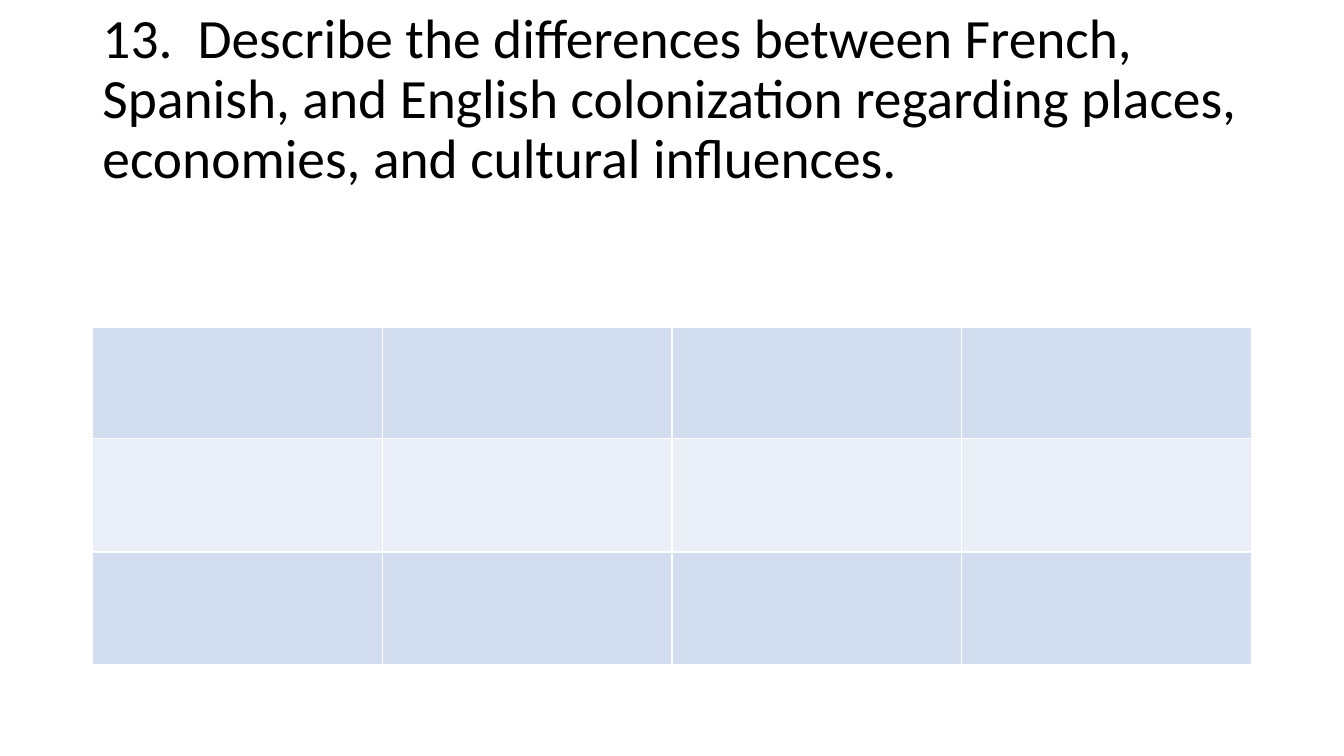
from lxml import etree
from pptx import Presentation
from pptx.dml.color import RGBColor
from pptx.enum import text
from pptx.oxml import ns
from pptx.util import Pt

LEFT, WIDTH = 66, 828
QUESTION = ("13.  Describe the differences between French, Spanish, and English "
            "colonization regarding places, economies, and cultural influences.")
ROW_FILLS = ["FFFFFF", "D2DEEF", "EAEFF7", "D2DEEF"]
COLUMNS = 4
ROW_HEIGHT = 80.8


def rgb(hex_color):
    return RGBColor.from_string(hex_color)


def add_title(slide, wording):
    title = slide.shapes.title
    title.left, title.top, title.width, title.height = Pt(LEFT), Pt(28.8), Pt(WIDTH), Pt(85.7)
    frame = title.text_frame
    frame.word_wrap = True
    frame.auto_size = text.MSO_AUTO_SIZE.NONE
    frame.vertical_anchor = text.MSO_ANCHOR.MIDDLE
    paragraph = frame.paragraphs[0]
    paragraph.alignment = text.PP_ALIGN.LEFT
    paragraph.line_spacing = 0.9
    run = paragraph.add_run()
    run.text = wording
    run.font.name = "Calibri"
    run.font.size = Pt(39.6)
    run.font.color.rgb = rgb("000000")


def set_borders(cell, hex_color, widths):
    """Draw the cell's edges; widths maps L, R, T and B to points."""
    properties = cell._tc.get_or_add_tcPr()
    for position, side in enumerate("LRTB"):
        line = etree.Element(ns.qn(f"a:ln{side}"), w=str(Pt(widths[side])))
        fill = etree.SubElement(line, ns.qn("a:solidFill"))
        etree.SubElement(fill, ns.qn("a:srgbClr"), val=hex_color)
        properties.insert(position, line)


def add_answer_grid(slide):
    grid = slide.shapes.add_table(len(ROW_FILLS), COLUMNS, Pt(LEFT), Pt(151.9),
                                  Pt(WIDTH), Pt(ROW_HEIGHT * len(ROW_FILLS))).table
    for row_index, row_fill in enumerate(ROW_FILLS):
        grid.rows[row_index].height = Pt(ROW_HEIGHT)
        widths = {"L": 1, "R": 1, "T": 1, "B": 3 if row_index == 0 else 1}
        for cell in grid.rows[row_index].cells:
            cell.fill.solid()
            cell.fill.fore_color.rgb = rgb(row_fill)
            set_borders(cell, "FFFFFF", widths)


def main():
    deck = Presentation()
    deck.slide_width, deck.slide_height = Pt(960), Pt(540)
    slide = deck.slides.add_slide(deck.slide_layouts.get_by_name("Title Only"))
    add_title(slide, QUESTION)
    add_answer_grid(slide)
    deck.save("out.pptx")


if __name__ == "__main__":
    main()
